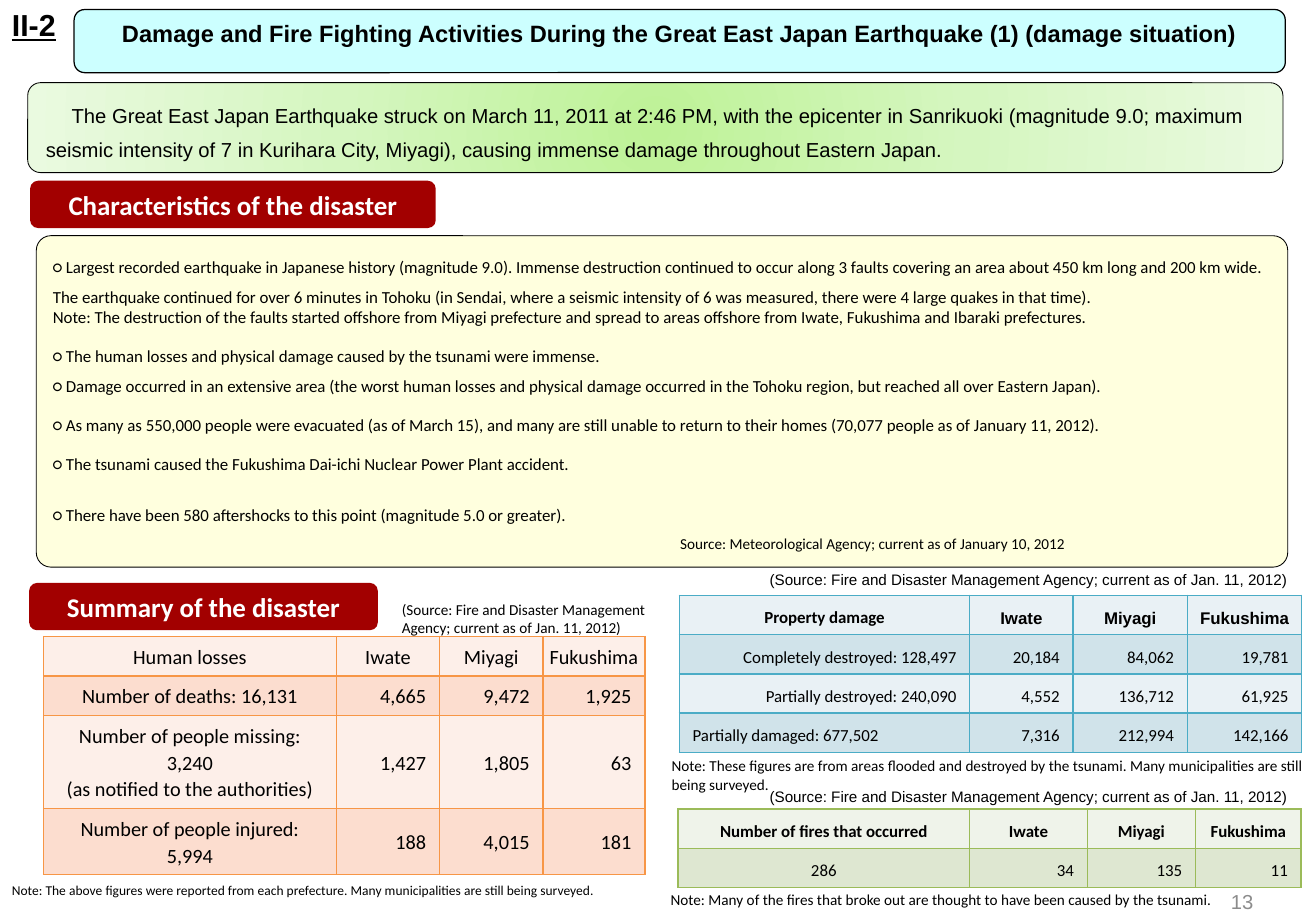
import pptx
import pptx.dml.color
import pptx.enum.shapes
import pptx.enum.text
import pptx.oxml
import pptx.oxml.ns
import pptx.util

Cm = pptx.util.Cm
Pt = pptx.util.Pt
ALIGN = pptx.enum.text.PP_ALIGN
ANCHOR = pptx.enum.text.MSO_ANCHOR

COLORS = {
    "black": "000000", "white": "FFFFFF", "page": "8C8C8C",
    "title": "CCFFFF", "heading": "A20000", "list": "FFFF99",
    "center": "BEF297", "middle": "D5F6C0", "edge": "EAFAE0",
}
# Border, odd rows, even rows
HUMAN_COLORS = ("F79646", "FDEFE9", "FCDDCF")
PROPERTY_COLORS = ("4BACC6", "E9F1F5", "D0E3EA")
FIRE_COLORS = ("9BBB59", "EFF3EA", "DEE7D1")

PREFECTURES = ["Iwate", "Miyagi", "Fukushima"]
AGENCY_SOURCE = "(Source: Fire and Disaster Management Agency; current as of Jan. 11, 2012)"

# Text, line spacing in points (None for single), space before in points
CHARACTERISTICS = [
    ("○ Largest recorded earthquake in Japanese history (magnitude 9.0). Immense destruction "
     "continued to occur along 3 faults covering an area about 450 km long and 200 km wide. "
     "The earthquake continued for over 6 minutes in Tohoku (in Sendai, where a seismic "
     "intensity of 6 was measured, there were 4 large quakes in that time).", 18, 0),
    ("Note: The destruction of the faults started offshore from Miyagi prefecture and spread "
     "to areas offshore from Iwate, Fukushima and Ibaraki prefectures.", None, 0),
    ("○ The human losses and physical damage caused by the tsunami were immense.", 18, 5),
    ("○ Damage occurred in an extensive area (the worst human losses and physical damage "
     "occurred in the Tohoku region, but reached all over Eastern Japan).", 18, 0),
    ("○ As many as 550,000 people were evacuated (as of March 15), and many are still unable "
     "to return to their homes (70,077 people as of January 11, 2012).", 18, 5),
    ("○ The tsunami caused the Fukushima Dai-ichi Nuclear Power Plant accident.", 18, 5),
    ("○ There have been 580 aftershocks to this point (magnitude 5.0 or greater).", 18, 12),
]


def rgb(value):
    return pptx.dml.color.RGBColor.from_string(value)


def format_paragraph(paragraph, size, font="Calibri", color="black", bold=False,
                     align=ALIGN.LEFT, spacing=None, before=0):
    paragraph.alignment = align
    paragraph.space_before = Pt(before)
    paragraph.line_spacing = Pt(spacing) if spacing else 1.0
    for run in paragraph.runs:
        run.font.name = font
        run.font.size = Pt(size)
        run.font.bold = bold
        run.font.color.rgb = rgb(COLORS[color])


def add_panel(slide, box, fill, line_width=0, corner=0.167):
    shape = slide.shapes.add_shape(
        pptx.enum.shapes.MSO_SHAPE.ROUNDED_RECTANGLE, *[Cm(length) for length in box])
    shape.shadow.inherit = False
    shape.adjustments[0] = corner
    shape.fill.solid()
    shape.fill.fore_color.rgb = rgb(COLORS[fill])
    if line_width:
        shape.line.color.rgb = rgb(COLORS["black"])
        shape.line.width = Pt(line_width)
    else:
        shape.line.fill.background()
    return shape


def place_placeholder(slide, placeholder, box):
    """Move a placeholder onto the panel drawn just before it."""
    placeholder.left, placeholder.top, placeholder.width, placeholder.height = map(Cm, box)
    slide.shapes._spTree.append(placeholder._element)
    frame = placeholder.text_frame
    frame.auto_size = pptx.enum.text.MSO_AUTO_SIZE.NONE
    frame.vertical_anchor = ANCHOR.TOP
    return frame


def add_text(slide, box, text, size, **style):
    frame = slide.shapes.add_textbox(*[Cm(length) for length in box]).text_frame
    frame.word_wrap = True
    frame.margin_right = 0
    frame.text = text
    format_paragraph(frame.paragraphs[0], size, **style)
    return frame


def add_title(slide, box):
    left, top, width, height = box
    add_panel(slide, box, "title", 0.75)
    frame = place_placeholder(slide, slide.shapes.title, (left, top + 0.06, width, height - 0.06))
    frame.text = ("Damage and Fire Fighting Activities During the Great East Japan "
                  "Earthquake (1) (damage situation)")
    format_paragraph(frame.paragraphs[0], 14, "Arial", bold=True, align=ALIGN.CENTER)
    # Section number in the corner
    number = add_text(slide, (0, 0, left, 1.32), "II-2", 18, font="Arial", bold=True)
    number.paragraphs[0].runs[0].font.underline = True


def add_introduction(slide, box):
    shape = add_panel(slide, box, "center", 0.5, 0.143)
    # Radial gradient from the centre
    stops = "".join(
        f'<a:gs pos="{position}"><a:srgbClr val="{COLORS[name]}"/></a:gs>'
        for position, name in ((0, "center"), (50000, "middle"), (100000, "edge")))
    gradient = pptx.oxml.parse_xml(
        f'<a:gradFill {pptx.oxml.ns.nsdecls("a")} rotWithShape="1"><a:gsLst>{stops}</a:gsLst>'
        '<a:path path="circle"><a:fillToRect l="50000" t="50000" r="50000" b="50000"/></a:path>'
        '</a:gradFill>')
    solid = shape._element.spPr.find(pptx.oxml.ns.qn("a:solidFill"))
    solid.getparent().replace(solid, gradient)
    frame = shape.text_frame
    frame.margin_left = frame.margin_right = Cm(0.3)
    frame.vertical_anchor = ANCHOR.MIDDLE
    frame.text = ("The Great East Japan Earthquake struck on March 11, 2011 at 2:46 PM, with the "
                  "epicenter in Sanrikuoki (magnitude 9.0; maximum seismic intensity of 7 in "
                  "Kurihara City, Miyagi), causing immense damage throughout Eastern Japan.")
    paragraph = frame.paragraphs[0]
    format_paragraph(paragraph, 12, "Arial", spacing=20)
    paragraph._p.get_or_add_pPr().set("indent", str(Cm(0.54)))


def add_heading(slide, box, text):
    frame = add_panel(slide, box, "heading").text_frame
    frame.vertical_anchor = ANCHOR.MIDDLE
    frame.text = text
    format_paragraph(frame.paragraphs[0], 16, color="white", bold=True, align=ALIGN.CENTER)


def add_characteristics(slide, box):
    left, top, width, height = box
    add_heading(slide, (left - 0.13, top - 1.15, 8.48, 0.99), "Characteristics of the disaster")
    panel = add_panel(slide, box, "list", 0.5, 0.044)
    color = panel._element.spPr.find(".//" + pptx.oxml.ns.qn("a:srgbClr"))
    color.append(pptx.oxml.parse_xml(f'<a:alpha {pptx.oxml.ns.nsdecls("a")} val="32000"/>'))
    frame = place_placeholder(slide, slide.placeholders[1],
                              (left + 0.09, top + 0.09, width - 0.18, height - 0.18))
    frame.text = "\n".join(text for text, _, _ in CHARACTERISTICS)
    for paragraph, (_, spacing, before) in zip(frame.paragraphs, CHARACTERISTICS):
        properties = paragraph._p.get_or_add_pPr()
        properties.set("marL", "0")
        properties.set("indent", "0")
        properties.append(pptx.oxml.parse_xml(f'<a:buNone {pptx.oxml.ns.nsdecls("a")}/>'))
        format_paragraph(paragraph, 10, spacing=spacing, before=before)
    add_text(slide, (left + 13.21, top + 6.12, 10.19, 0.64),
             "Source: Meteorological Agency; current as of January 10, 2012", 9)


def add_damage_table(slide, left, top, widths, heights, rows, colors, size,
                     header_font="Calibri", header_bold=True, label_aligns=None):
    border, *bands = colors
    table = slide.shapes.add_table(len(rows), len(widths), Cm(left), Cm(top),
                                   Cm(sum(widths)), Cm(sum(heights))).table
    for column, width in zip(table.columns, widths):
        column.width = Cm(width)
    for row_index, (values, height) in enumerate(zip(rows, heights)):
        table.rows[row_index].height = Cm(height)
        for column_index, value in enumerate(values):
            cell = table.cell(row_index, column_index)
            is_header, is_label = row_index == 0, column_index == 0
            for side in ("lnL", "lnR", "lnT", "lnB"):
                cell._tc.get_or_add_tcPr().append(pptx.oxml.parse_xml(
                    f'<a:{side} {pptx.oxml.ns.nsdecls("a")} w="12700"><a:solidFill>'
                    f'<a:srgbClr val="{border}"/></a:solidFill></a:{side}>'))
            cell.fill.solid()
            cell.fill.fore_color.rgb = rgb(bands[row_index % 2])
            cell.vertical_anchor = ANCHOR.MIDDLE
            cell.margin_left = cell.margin_right = Cm(0 if is_header and not is_label else 0.28)
            align = ALIGN.CENTER if is_header or is_label else ALIGN.RIGHT
            if is_label and label_aligns:
                align = label_aligns[row_index]
            cell.text_frame.text = value
            for paragraph in cell.text_frame.paragraphs:
                format_paragraph(paragraph, size,
                                 header_font if is_header and not is_label else "Calibri",
                                 bold=is_header and header_bold, align=align, spacing=16)


def add_human_losses(slide, left, top):
    add_heading(slide, (left - 0.3, top - 1.12, 7.29, 0.99), "Summary of the disaster")
    add_text(slide, (left + 7.24, top - 0.89, 5.6, 1.02), AGENCY_SOURCE, 9)
    add_damage_table(
        slide, left, top, [6.12, 2.16, 2.16, 2.13], [0.83, 0.81, 1.95, 1.38],
        [["Human losses"] + PREFECTURES,
         ["Number of deaths: 16,131", "4,665", "9,472", "1,925"],
         ["Number of people missing: 3,240\n(as notified to the authorities)",
          "1,427", "1,805", "63"],
         ["Number of people injured: 5,994", "188", "4,015", "181"]],
        HUMAN_COLORS, 12, header_bold=False)
    add_text(slide, (left - 0.91, top + 5, 14, 0.61),
             "Note: The above figures were reported from each prefecture. Many municipalities "
             "are still being surveyed.", 8)


def add_property_damage(slide, left, top):
    add_text(slide, (left + 0.76, top - 0.64, 11.94, 0.64), AGENCY_SOURCE, 9,
             font="Arial", align=ALIGN.RIGHT)
    add_damage_table(
        slide, left, top, [6.07, 2.16, 2.39, 2.39], [0.82] * 4,
        [["Property damage"] + PREFECTURES,
         ["Completely destroyed: 128,497", "20,184", "84,062", "19,781"],
         ["Partially destroyed: 240,090", "4,552", "136,712", "61,925"],
         ["Partially damaged: 677,502", "7,316", "212,994", "142,166"]],
        PROPERTY_COLORS, 10, header_font="Arial",
        label_aligns=[ALIGN.CENTER, ALIGN.RIGHT, ALIGN.RIGHT, ALIGN.LEFT])
    add_text(slide, (left - 0.41, top + 3.25, 13.7, 1.02),
             "Note: These figures are from areas flooded and destroyed by the tsunami. Many "
             "municipalities are still being surveyed.", 9)


def add_fires(slide, left, top):
    add_text(slide, (left + 0.79, top - 0.59, 11.94, 0.64), AGENCY_SOURCE, 9,
             font="Arial", align=ALIGN.RIGHT)
    add_damage_table(
        slide, left, top, [6.1, 2.46, 2.26, 2.21], [0.81] * 2,
        [["Number of fires that occurred"] + PREFECTURES, ["286", "34", "135", "11"]],
        FIRE_COLORS, 10)
    add_text(slide, (left - 0.4, top + 1.57, 12.6, 0.64),
             "Note: Many of the fires that broke out are thought to have been caused by the "
             "tsunami.", 9)


def main():
    presentation = pptx.Presentation()
    presentation.slide_width, presentation.slide_height = Cm(27.51), Cm(19.05)
    slide = presentation.slides.add_slide(presentation.slide_layouts[1])
    add_title(slide, (1.55, 0.2, 25.32, 1.32))
    add_introduction(slide, (0.58, 1.73, 26.24, 1.88))
    add_characteristics(slide, (0.76, 4.93, 26.16, 6.93))
    add_human_losses(slide, 0.91, 13.31)
    add_property_damage(slide, 14.2, 12.45)
    add_fires(slide, 14.17, 16.92)
    # Page number
    page = add_text(slide, (24.2, 18.34, 2, 1.02), "13", 12, font="Arial", color="page",
                    align=ALIGN.RIGHT)
    page.vertical_anchor = ANCHOR.MIDDLE
    presentation.save("out.pptx")


if __name__ == "__main__":
    main()
